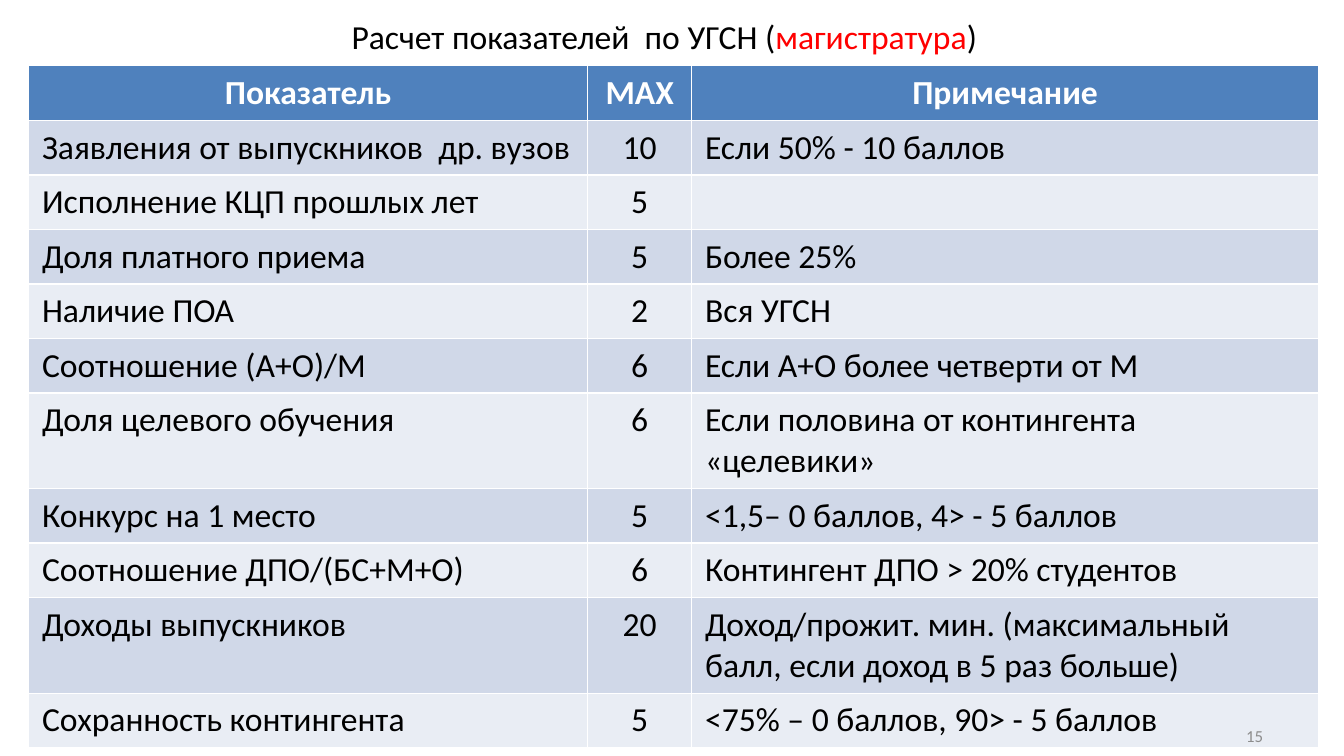
from pptx import Presentation
from pptx.dml.color import RGBColor
from pptx.enum.text import MSO_ANCHOR, MSO_AUTO_SIZE, PP_ALIGN
from pptx.util import Cm, Pt

FONT = "Calibri"
BLACK = RGBColor(0x00, 0x00, 0x00)
WHITE = RGBColor(0xFF, 0xFF, 0xFF)
RED = RGBColor(0xFF, 0x00, 0x00)
GREY = RGBColor(0x8C, 0x8C, 0x8C)
HEADER_BLUE = RGBColor(0x4F, 0x81, 0xBD)
BAND_DARK = RGBColor(0xD0, 0xD8, 0xE8)
BAND_LIGHT = RGBColor(0xE9, 0xED, 0xF4)

# Content
TITLE_RUNS = [
    ("Расчет показателей  по УГСН (", BLACK),
    ("магистратура", RED),
    (")", BLACK),
]
ROWS = [
    ("Показатель", "МАХ", "Примечание"),
    ("Заявления от выпускников  др. вузов", "10", "Если 50% - 10 баллов"),
    ("Исполнение КЦП прошлых лет", "5", ""),
    ("Доля платного приема", "5", "Более 25%"),
    ("Наличие ПОА", "2", "Вся УГСН"),
    ("Соотношение (А+О)/М", "6", "Если А+О более четверти от М"),
    ("Доля целевого обучения", "6", "Если половина от контингента «целевики»"),
    ("Конкурс на 1 место", "5", "<1,5– 0 баллов, 4> - 5 баллов"),
    ("Соотношение ДПО/(БС+М+О)", "6", "Контингент ДПО > 20% студентов"),
    ("Доходы выпускников", "20",
     "Доход/прожит. мин. (максимальный балл, если доход в 5 раз больше)"),
    ("Сохранность контингента", "5", "<75% – 0 баллов, 90> - 5 баллов"),
]
PAGE_NUMBER = "15"

# Layout
COLUMN_WIDTHS = [Cm(14.09), Cm(2.62), Cm(15.8)]
ROW_HEIGHT, TALL_ROW_HEIGHT = Cm(1.37), Cm(2.4)
ONE_LINE_LIMIT = 35  # longer notes wrap to a second line


def style_paragraph(paragraph, size, align, color=None, bold=None):
    paragraph.alignment = align
    paragraph.font.name = FONT
    paragraph.font.size = Pt(size)
    if bold is not None:
        paragraph.font.bold = bold
    if color is not None:
        paragraph.font.color.rgb = color


presentation = Presentation()
presentation.slide_width, presentation.slide_height = Cm(33.87), Cm(19.05)
slide = presentation.slides.add_slide(presentation.slide_layouts[5])

# Title
title = slide.shapes.title
title.left, title.top, title.width, title.height = Cm(2.49), Cm(0.48), Cm(28.5), Cm(0.86)
title.text_frame.auto_size = MSO_AUTO_SIZE.NONE
title.text_frame.vertical_anchor = MSO_ANCHOR.MIDDLE
title_paragraph = title.text_frame.paragraphs[0]
style_paragraph(title_paragraph, 24, PP_ALIGN.CENTER)
for text, color in TITLE_RUNS:
    run = title_paragraph.add_run()
    run.text = text
    run.font.color.rgb = color

# Table
heights = [TALL_ROW_HEIGHT if len(note) > ONE_LINE_LIMIT else ROW_HEIGHT
           for _, _, note in ROWS]
table = slide.shapes.add_table(len(ROWS), len(COLUMN_WIDTHS), Cm(0.72), Cm(1.66),
                               sum(COLUMN_WIDTHS), sum(heights)).table
for column, width in zip(table.columns, COLUMN_WIDTHS):
    column.width = width
for row_index, (row, height, texts) in enumerate(zip(table.rows, heights, ROWS)):
    row.height = height
    is_header = row_index == 0
    band = BAND_DARK if row_index % 2 else BAND_LIGHT
    for column_index, (cell, text) in enumerate(zip(row.cells, texts)):
        cell.fill.solid()
        cell.fill.fore_color.rgb = HEADER_BLUE if is_header else band
        cell.margin_left = cell.margin_right = Cm(0.34)
        cell.margin_top = cell.margin_bottom = Cm(0.17)
        cell.text = text
        centred = is_header or column_index == 1
        style_paragraph(cell.text_frame.paragraphs[0], 24,
                        PP_ALIGN.CENTER if centred else PP_ALIGN.LEFT,
                        WHITE if is_header else BLACK, is_header)

# Page number
number_box = slide.shapes.add_textbox(Cm(24.18), Cm(18.03), Cm(7.9), Cm(1.02))
number_frame = number_box.text_frame
number_frame.word_wrap = True
number_frame.vertical_anchor = MSO_ANCHOR.MIDDLE
number_frame.text = PAGE_NUMBER
style_paragraph(number_frame.paragraphs[0], 12, PP_ALIGN.RIGHT, GREY)

presentation.save("out.pptx")
